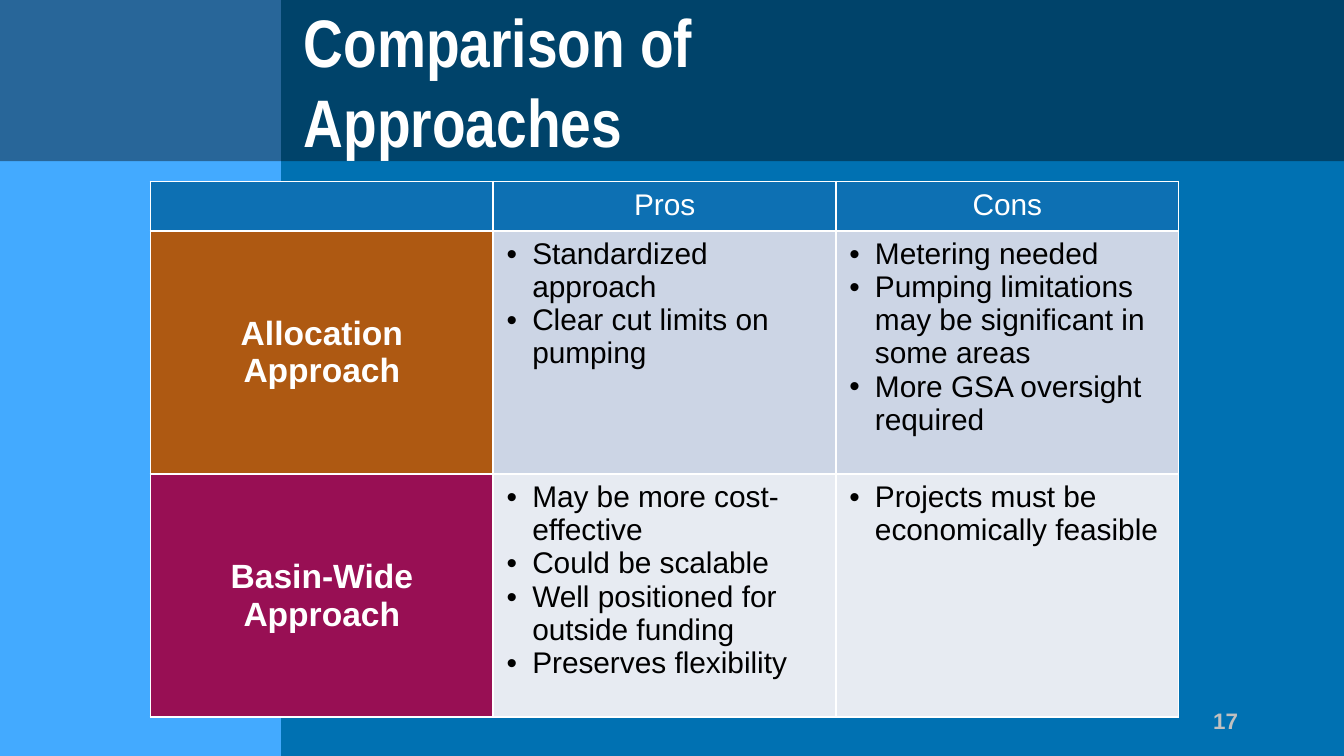
from lxml.etree import SubElement
from pptx import Presentation
from pptx.dml.color import RGBColor
from pptx.enum.shapes import MSO_SHAPE
from pptx.enum.text import MSO_ANCHOR, PP_ALIGN
from pptx.oxml.ns import qn
from pptx.util import Inches, Pt

BLUE = RGBColor(0x00, 0x71, 0xB2)
SKY = RGBColor(0x43, 0xAA, 0xFF)
HEAD = RGBColor(0x0D, 0x70, 0xB3)
RUST = RGBColor(0xAE, 0x59, 0x12)
PLUM = RGBColor(0x98, 0x0F, 0x54)
MIST = RGBColor(0xCC, 0xD5, 0xE5)
PALE = RGBColor(0xE7, 0xEB, 0xF2)
GRAY = RGBColor(0xC0, 0xC0, 0xC0)
WHITE = RGBColor(0xFF, 0xFF, 0xFF)
BLACK = RGBColor(0x00, 0x00, 0x00)

WIDE = 10
HIGH = WIDE * 9 / 16
HEADS = ["", "Pros", "Cons"]
ROWS = [
    ("Allocation Approach", RUST, MIST, [
        ["Standardized approach", "Clear cut limits on pumping"],
        ["Metering needed",
         "Pumping limitations may be significant in some areas",
         "More GSA oversight required"],
    ]),
    ("Basin-Wide Approach", PLUM, PALE, [
        ["May be more cost-effective", "Could be scalable",
         "Well positioned for outside funding", "Preserves flexibility"],
        ["Projects must be economically feasible"],
    ]),
]


def style(para, size, color, bold=False, face="Arial"):
    for run in para.runs:
        font = run.font
        font.name, font.size, font.bold = face, Pt(size), bold
        font.color.rgb = color


def add_rect(slide, x, y, w, h, color, alpha=None):
    rect = slide.shapes.add_shape(
        MSO_SHAPE.RECTANGLE, Inches(x), Inches(y), Inches(w), Inches(h))
    rect.shadow.inherit = False
    rect.fill.solid()
    rect.fill.fore_color.rgb = color
    rect.line.fill.background()
    if alpha is not None:
        tint = rect._element.spPr.find(qn("a:solidFill"))[0]
        SubElement(tint, qn("a:alpha"), val=str(alpha * 1000))


def add_text(slide, x, y, w, h, text):
    box = slide.shapes.add_textbox(Inches(x), Inches(y), Inches(w), Inches(h))
    frame = box.text_frame
    frame.word_wrap = True
    frame.text = text
    return frame


def add_back(slide, w, h):
    slide.background.fill.solid()
    slide.background.fill.fore_color.rgb = BLUE
    add_rect(slide, 0, 0, 2.09, h, SKY)
    add_rect(slide, 0, 0, w, 1.2, BLACK, 40)


def add_title(slide, x, y, w, h):
    frame = add_text(slide, x, y, w, h, "Comparison of Approaches")
    frame.vertical_anchor = MSO_ANCHOR.MIDDLE
    frame.margin_left = frame.margin_right = Inches(0.04)
    frame.margin_top = frame.margin_bottom = Inches(0.02)
    style(frame.paragraphs[0], 36, WHITE, True, "Arial Narrow")


def paint(cell, color):
    props = cell._tc.get_or_add_tcPr()
    for side in ("lnL", "lnR", "lnT", "lnB"):
        line = SubElement(props, qn(f"a:{side}"), w=str(Pt(1)))
        fill = SubElement(line, qn("a:solidFill"))
        SubElement(fill, qn("a:srgbClr"), val=str(WHITE))
    cell.fill.solid()
    cell.fill.fore_color.rgb = color


def label(cell, text, color, size, bold):
    paint(cell, color)
    para = cell.text_frame.paragraphs[0]
    para.alignment = PP_ALIGN.CENTER
    if text:
        para.text = text
        style(para, size, WHITE, bold)
    else:
        SubElement(para._p, qn("a:endParaRPr"), sz=str(size * 100))


def add_list(cell, items, color):
    paint(cell, color)
    frame = cell.text_frame
    frame.text = "\n".join(items)
    for para in frame.paragraphs:
        props = para._p.get_or_add_pPr()
        props.set("marL", str(Inches(0.19)))
        props.set("indent", str(-Inches(0.19)))
        SubElement(props, qn("a:buFont"), typeface="Arial")
        SubElement(props, qn("a:buChar"), char="•")
        style(para, 16, BLACK)


def add_grid(slide, x, y, w, h):
    count = len(HEADS)
    top = 0.36
    table = slide.shapes.add_table(
        len(ROWS) + 1, count, Inches(x), Inches(y), Inches(w), Inches(h)).table
    table.first_row = table.horz_banding = False
    for col in table.columns:
        col.width = Inches(w / count)
    for i, row in enumerate(table.rows):
        row.height = Inches((h - top) / len(ROWS) if i else top)
    for j, text in enumerate(HEADS):
        label(table.cell(0, j), text, HEAD, 16, False)
    for i, (name, color, tint, lists) in enumerate(ROWS, 1):
        label(table.cell(i, 0), name, color, 18, True)
        table.cell(i, 0).vertical_anchor = MSO_ANCHOR.MIDDLE
        for j, items in enumerate(lists, 1):
            add_list(table.cell(i, j), items, tint)


def add_number(slide, x, y, w, h):
    para = add_text(slide, x, y, w, h, "17").paragraphs[0]
    para.alignment = PP_ALIGN.RIGHT
    style(para, 12, GRAY, True)


def main():
    deck = Presentation()
    deck.slide_width, deck.slide_height = Inches(WIDE), Inches(HIGH)
    slide = deck.slides.add_slide(deck.slide_layouts[6])
    add_back(slide, WIDE, HIGH)
    add_title(slide, 2.22, 0.13, 4.89, 0.94)
    add_grid(slide, 1.12, 1.35, 7.65, 3.98)
    add_number(slide, 7.06, 5.21, 2.25, 0.3)
    deck.save("out.pptx")


if __name__ == "__main__":
    main()
